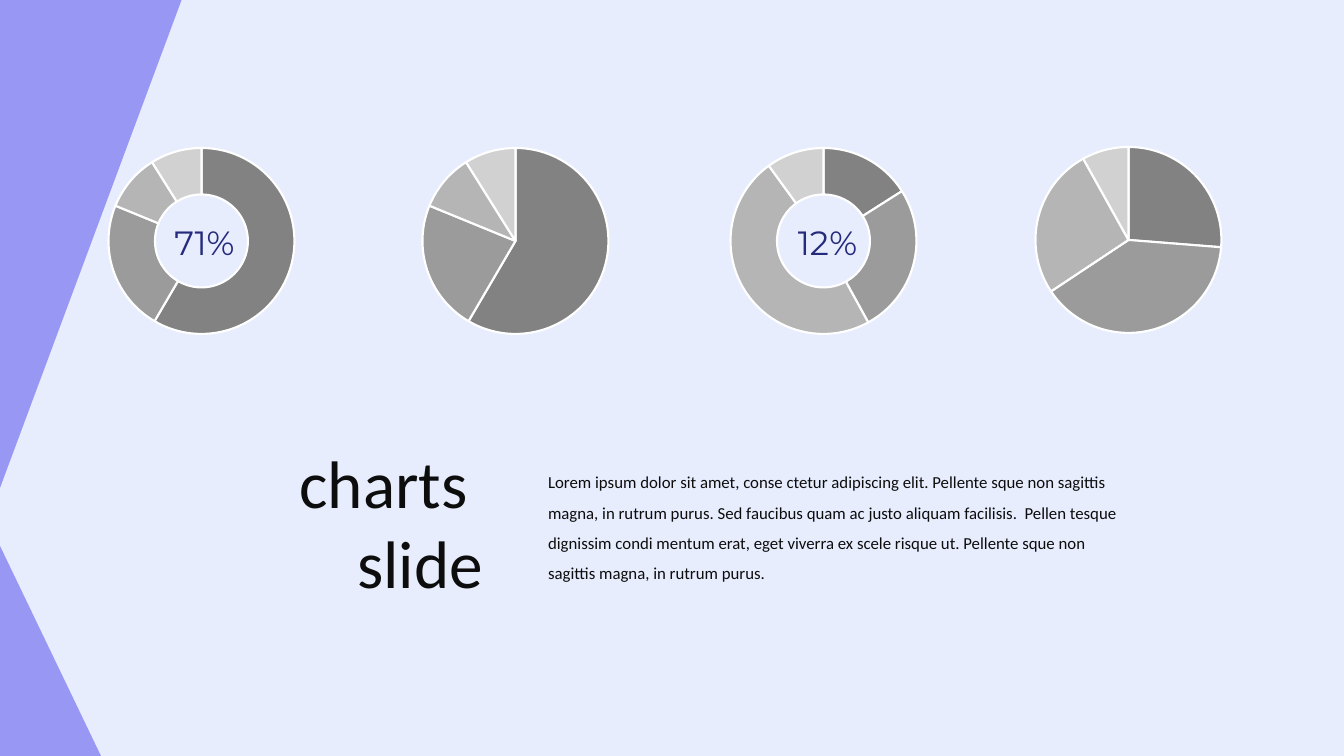
from lxml import etree
from pptx import Presentation
from pptx.chart.data import CategoryChartData
from pptx.dml.color import RGBColor
from pptx.enum.chart import XL_CHART_TYPE as ChartType
from pptx.enum.shapes import MSO_SHAPE as Preset
from pptx.enum.text import MSO_ANCHOR as Anchor, MSO_AUTO_SIZE as AutoSize, PP_ALIGN as Align
from pptx.oxml.ns import qn
from pptx.util import Pt

EMU_PER_PX = 914400 / 100.8
BACKGROUND, LILAC, NAVY, INK = "E7EDFD", "9898F4", "262A7C", "0D0D0D"
SLICE_GREYS = ("828282", "9B9B9B", "B5B5B5", "D1D1D1")
RING_SIZE = 186

BODY_TEXT = (
    "Lorem ipsum dolor sit amet, conse ctetur adipiscing elit. Pellente sque non sagittis "
    "magna, in rutrum purus. Sed faucibus quam ac justo aliquam facilisis.  Pellen tesque "
    "dignissim condi mentum erat, eget viverra ex scele risque ut. Pellente sque non "
    "sagittis magna, in rutrum purus."
)


def px(*lengths):
    """Turn pixel lengths into EMU."""
    return [round(length * EMU_PER_PX) for length in lengths]


def paint(fill, colour):
    fill.solid()
    fill.fore_color.rgb = RGBColor.from_string(colour)


def place(shape, box):
    shape.left, shape.top, shape.width, shape.height = px(*box)


def write(frame, *lines, size, colour=INK, face="Calibri", align=Align.LEFT, spacing=1.0):
    frame.word_wrap = True
    frame.auto_size = AutoSize.NONE
    frame.vertical_anchor = Anchor.TOP
    for index, line in enumerate(lines):
        paragraph = frame.add_paragraph() if index else frame.paragraphs[0]
        properties = paragraph._p.get_or_add_pPr()
        properties.set("marL", "0")
        properties.set("indent", "0")
        etree.SubElement(properties, qn("a:buNone"))
        paragraph.alignment = align
        paragraph.line_spacing = spacing
        paragraph.space_before = Pt(0)
        run = paragraph.add_run()
        run.text = line
        run.font.size = Pt(size)
        run.font.name = face
        run.font.color.rgb = RGBColor.from_string(colour)


def add_corner(slide, box, at_top=False):
    corner = slide.shapes.add_shape(Preset.RIGHT_TRIANGLE, *px(*box))
    corner.shadow.inherit = False
    paint(corner.fill, LILAC)
    corner.line.fill.background()
    if at_top:
        corner.rotation = 180
        corner._element.spPr.find(qn("a:xfrm")).set("flipH", "1")


def centre_plot(chart, width, height):
    """Fix the round plot area in the middle of its frame."""
    plot_area = chart._chartSpace.chart.plotArea
    layout = plot_area.find(qn("c:layout"))
    if layout is None:
        layout = etree.Element(qn("c:layout"))
        plot_area.insert(0, layout)
    manual = etree.SubElement(layout, qn("c:manualLayout"))
    share_x, share_y = RING_SIZE / width, RING_SIZE / height
    settings = {
        "layoutTarget": "inner", "xMode": "edge", "yMode": "edge",
        "x": (1 - share_x) / 2, "y": (1 - share_y) / 2, "w": share_x, "h": share_y,
    }
    for tag, value in settings.items():
        text = value if isinstance(value, str) else f"{value:.4f}"
        etree.SubElement(manual, qn(f"c:{tag}")).set("val", text)


def add_round_chart(slide, kind, box, shares):
    data = CategoryChartData()
    data.categories = ["1", "2", "3", "4"]
    data.add_series("Series 1", shares)
    chart = slide.shapes.add_chart(kind, *px(*box), data).chart
    chart.has_title = False
    chart.has_legend = False
    chart.font.size = Pt(10)
    chart.font.name = "Calibri"
    chart.font.color.rgb = RGBColor.from_string("000000")
    plot = chart.plots[0]
    plot.vary_by_categories = True
    for index, grey in enumerate(SLICE_GREYS):
        piece = plot.series[0].points[index].format
        paint(piece.fill, grey)
        paint(piece.line.fill, "FFFFFF")
        piece.line.width = Pt(1.5)
    for hole in plot._element.iter(qn("c:holeSize")):
        hole.set("val", "75")
    centre_plot(chart, *box[2:])


def add_percentage(slide, box, text):
    label = slide.shapes.add_textbox(*px(*box))
    write(label.text_frame, text, size=24, colour=NAVY, face="Montserrat", align=Align.CENTER)


def main():
    deck = Presentation()
    deck.slide_width, deck.slide_height = px(1344, 756)
    slide = deck.slides.add_slide(deck.slide_layouts[1])
    paint(slide.background.fill, BACKGROUND)

    add_corner(slide, (0, 546, 101, 210))
    add_corner(slide, (0, -1, 182, 489), at_top=True)

    title, body = slide.placeholders
    place(title, (214, 436, 279, 173))
    write(title.text_frame, "charts ", "slide", size=48, align=Align.RIGHT)
    place(body, (538, 457, 592, 132))
    write(body.text_frame, BODY_TEXT, size=12, spacing=1.5)

    for kind, box, shares in (
        (ChartType.DOUGHNUT, (62, 134, 279, 214), (59, 23, 10, 9)),
        (ChartType.PIE, (374, 134, 283, 214), (59, 23, 10, 9)),
        (ChartType.DOUGHNUT, (684, 134, 279, 214), (16, 26, 48, 10)),
        (ChartType.PIE, (987, 133, 283, 214), (26, 39, 26, 8)),
    ):
        add_round_chart(slide, kind, box, shares)

    add_percentage(slide, (775, 217, 105, 50), "12%")
    add_percentage(slide, (152, 217, 105, 50), "71%")
    deck.save("out.pptx")


if __name__ == "__main__":
    main()
